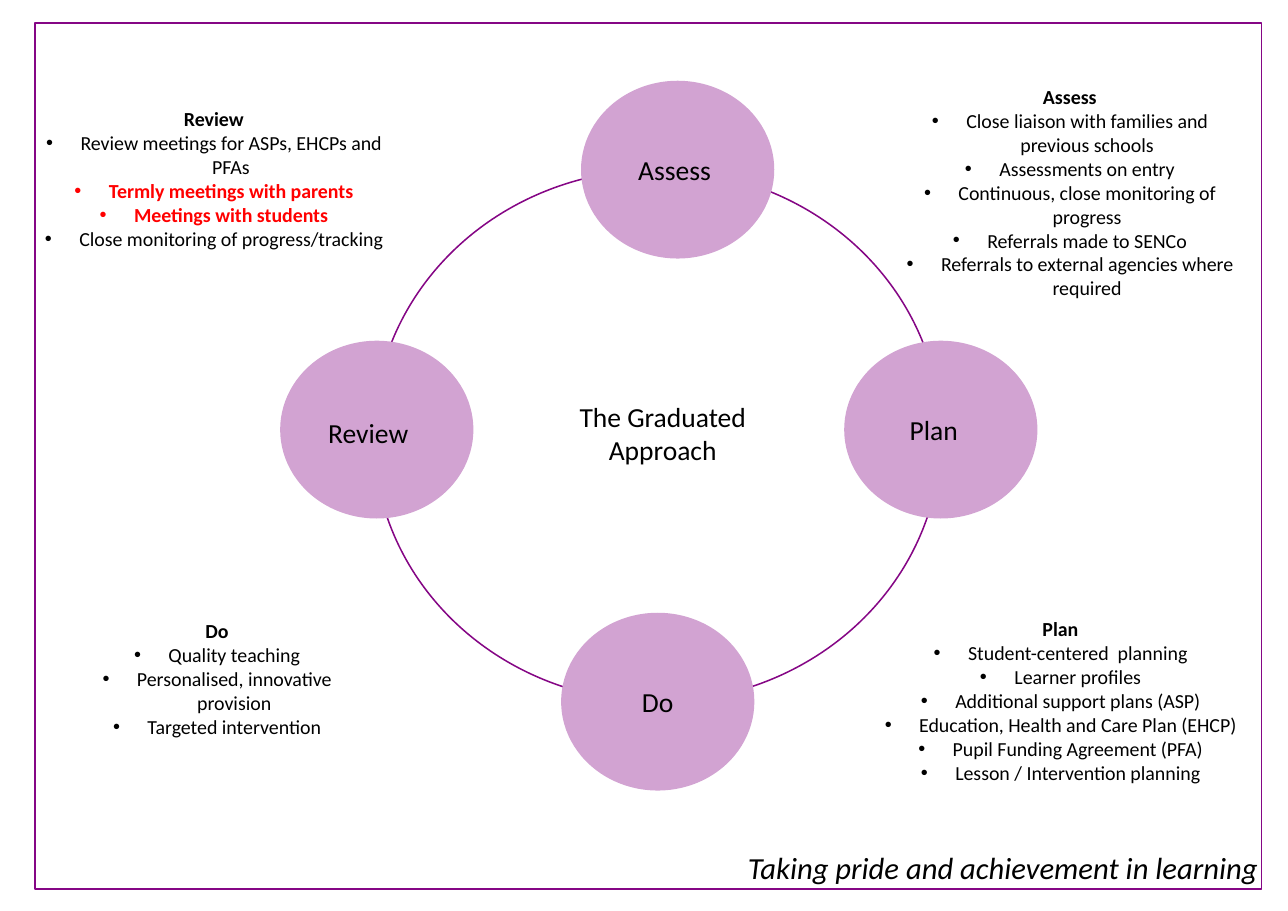
from lxml import etree
from pptx import Presentation
from pptx.dml.color import RGBColor
from pptx.enum.shapes import MSO_SHAPE
from pptx.enum.text import MSO_ANCHOR, MSO_AUTO_SIZE, PP_ALIGN
from pptx.oxml.ns import qn
from pptx.util import Pt

COLORS = {"purple": "850685", "lilac": "D2A3D2", "black": "000000", "red": "FF0000"}
FONT = "Calibri"
SLIDE_SIZE = (841.7, 595.4)

APPROACH = "The Graduated Approach"
APPROACH_BOX = (367.2, 257.8, 131.8, 51.1)
MOTTO = "Taking pride and achievement in learning"
MOTTO_BOX = (472, 551.5, 367, 31.7)
FRAME_BOX = (23, 15.1, 801.4, 565.9)
CYCLE_BOX = (244.1, 110.9, 370.8, 347.8)
STAGE_SIZE = (125.3, 115.2)
INSET_X, INSET_Y = 7.2, 3.6
BULLET_INDENT = 22.5

# Each stage: corner of its circle, label shift left and down, list box, list items
STAGES = {
    "Review": ((183.6, 223.2), (5.5, 2), (21.6, 66.2, 236.2, 117.4), [
        "Review meetings for ASPs, EHCPs and PFAs",
        "Termly meetings with parents",
        "Meetings with students",
        "Close monitoring of progress/tracking",
    ]),
    "Do": ((367.2, 401), (0, 0), (37.4, 401, 208.8, 85.7), [
        "Quality teaching",
        "Personalised, innovative provision",
        "Targeted intervention",
    ]),
    "Assess": ((380.2, 53.3), (2, 0), (579.6, 51.8, 239, 149), [
        "Close liaison with families and previous schools",
        "Assessments on entry",
        "Continuous, close monitoring of progress",
        "Referrals made to SENCo",
        "Referrals to external agencies where required",
    ]),
    "Plan": ((552.2, 223.2), (4.5, 0), (545, 399.6, 296, 117.4), [
        "Student-centered  planning",
        "Learner profiles",
        "Additional support plans (ASP)",
        "Education, Health and Care Plan (EHCP)",
        "Pupil Funding Agreement (PFA)",
        "Lesson / Intervention planning",
    ]),
}
HIGHLIGHTS = {"Termly meetings with parents", "Meetings with students"}


def rgb(name):
    return RGBColor.from_string(COLORS[name])


def place(shape, box):
    shape.left, shape.top, shape.width, shape.height = map(Pt, box)


def format_paragraph(paragraph, size, color="black", bold=False, italic=False):
    paragraph.alignment = PP_ALIGN.CENTER
    paragraph.space_before = Pt(0)
    for run in paragraph.runs:
        font = run.font
        font.name, font.size, font.bold, font.italic = FONT, Pt(size), bold, italic
        font.color.rgb = rgb(color)


def set_bullet(paragraph, bullet):
    """Hang the paragraph on a bullet character, or clear the bullet if it is None."""
    properties = paragraph._p.get_or_add_pPr()
    indent = Pt(BULLET_INDENT) if bullet else 0
    properties.set("marL", str(indent))
    properties.set("indent", str(-indent))
    if bullet:
        etree.SubElement(properties, qn("a:buChar"), char=bullet)
    else:
        etree.SubElement(properties, qn("a:buNone"))


def prepare_frame(frame, anchor):
    frame.word_wrap = True
    frame.auto_size = MSO_AUTO_SIZE.NONE
    frame.vertical_anchor = anchor
    frame.margin_left = frame.margin_right = Pt(INSET_X)
    frame.margin_top = frame.margin_bottom = Pt(INSET_Y)


def fill_text(shape, box, text, size, italic=False):
    place(shape, box)
    prepare_frame(shape.text_frame, MSO_ANCHOR.TOP)
    shape.text_frame.text = text
    format_paragraph(shape.text_frame.paragraphs[0], size, italic=italic)


def fill_list(placeholder, box, heading, items):
    place(placeholder, box)
    frame = placeholder.text_frame
    prepare_frame(frame, MSO_ANCHOR.TOP)
    frame.text = "\n".join([heading, *items])
    title, *bullets = frame.paragraphs
    format_paragraph(title, 13, bold=True)
    set_bullet(title, None)
    for bullet in bullets:
        important = bullet.text in HIGHLIGHTS
        format_paragraph(bullet, 13, "red" if important else "black", important)
        set_bullet(bullet, "•")


def add_outline(slide, kind, box, line, fill=None):
    shape = slide.shapes.add_shape(kind, *map(Pt, box))
    shape.shadow.inherit = False
    shape.line.color.rgb = rgb(line)
    shape.line.width = Pt(1)
    if fill:
        shape.fill.solid()
        shape.fill.fore_color.rgb = rgb(fill)
    else:
        shape.fill.background()
    return shape


def add_stage(slide, name, corner, shift):
    circle = add_outline(slide, MSO_SHAPE.OVAL, (*corner, *STAGE_SIZE), "lilac", "lilac")
    frame = circle.text_frame
    prepare_frame(frame, MSO_ANCHOR.MIDDLE)
    left, down = shift
    frame.margin_right = Pt(INSET_X + 2 * left)
    frame.margin_top = Pt(INSET_Y + 2 * down)
    frame.text = name
    format_paragraph(frame.paragraphs[0], 18)


def main():
    deck = Presentation()
    deck.slide_width, deck.slide_height = map(Pt, SLIDE_SIZE)
    slide = deck.slides.add_slide(deck.slide_layouts.get_by_name("Comparison"))
    title, *lists = slide.placeholders

    fill_text(title, APPROACH_BOX, APPROACH, 18)
    add_outline(slide, MSO_SHAPE.OVAL, CYCLE_BOX, "purple")
    for placeholder, (name, stage) in zip(lists, STAGES.items()):
        corner, shift, list_box, items = stage
        add_stage(slide, name, corner, shift)
        fill_list(placeholder, list_box, name, items)
    add_outline(slide, MSO_SHAPE.RECTANGLE, FRAME_BOX, "purple")
    motto = slide.shapes.add_textbox(0, 0, 0, 0)
    fill_text(motto, MOTTO_BOX, MOTTO, 20, italic=True)
    deck.save("out.pptx")


if __name__ == "__main__":
    main()
